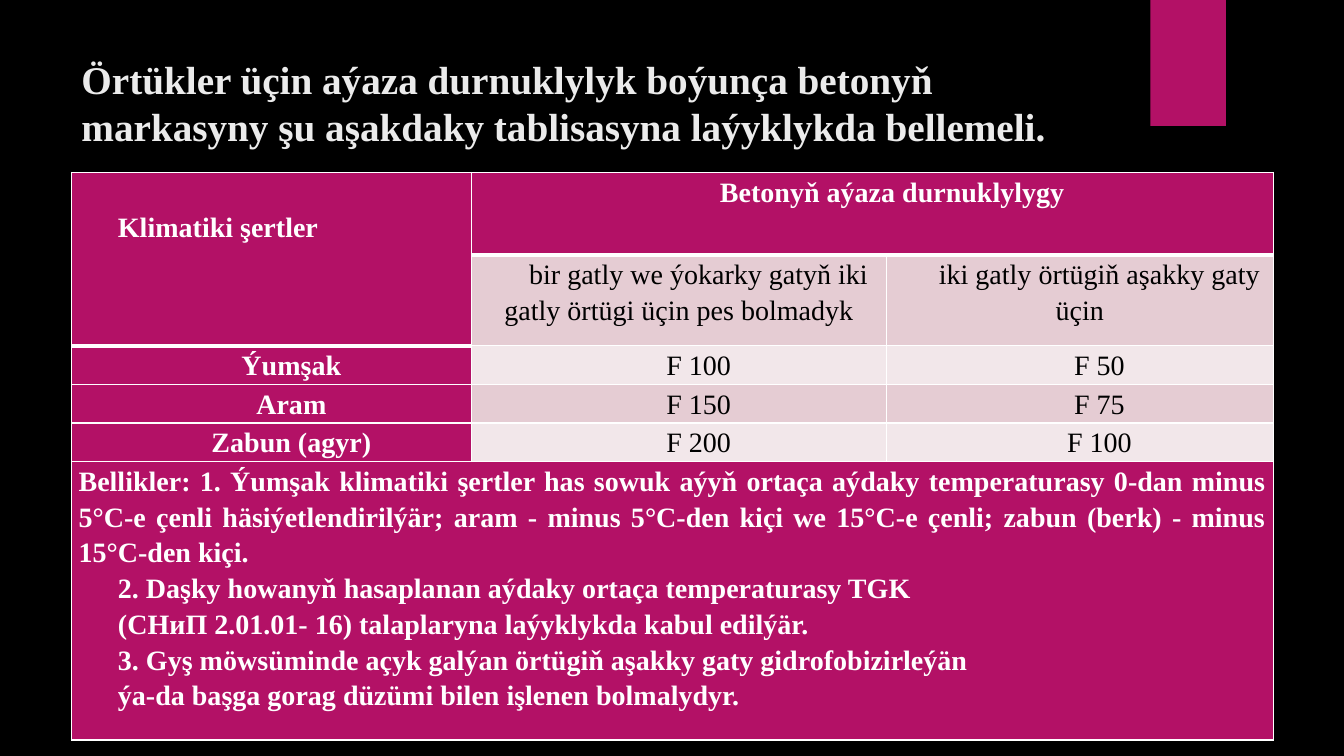
import pptx
import pptx.dml.color
import pptx.enum.shapes
import pptx.enum.text
import pptx.oxml
import pptx.oxml.ns
import pptx.util

Inches = pptx.util.Inches
Pt = pptx.util.Pt
RGBColor = pptx.dml.color.RGBColor
Align = pptx.enum.text.PP_ALIGN

BLACK = RGBColor(0x00, 0x00, 0x00)
WHITE = RGBColor(0xFF, 0xFF, 0xFF)
TITLE_GRAY = RGBColor(0xEB, 0xEB, 0xEB)
MAGENTA = RGBColor(0xB3, 0x11, 0x66)
ROSE = RGBColor(0xE5, 0xCC, 0xD3)
PALE_ROSE = RGBColor(0xF2, 0xE7, 0xEA)

TITLE = ("Örtükler üçin aýaza durnuklylyk boýunça betonyň "
         "markasyny şu aşakdaky tablisasyna laýyklykda bellemeli.")
NOTES = [
    "Bellikler: 1. Ýumşak klimatiki şertler has sowuk aýyň ortaça aýdaky "
    "temperaturasy 0-dan minus 5°С-e çenli häsiýetlendirilýär; aram - minus "
    "5°С-den kiçi we 15°С-e çenli; zabun (berk) - minus 15°С-den kiçi.",
    "2. Daşky howanyň hasaplanan aýdaky ortaça temperaturasy TGK",
    "(СНиП 2.01.01- 16) talaplaryna laýyklykda kabul edilýär.",
    "3. Gyş möwsüminde açyk galýan örtügiň aşakky gaty gidrofobizirleýän",
    "ýa-da başga gorag düzümi bilen işlenen bolmalydyr.",
]
ROWS = [
    ["Klimatiki şertler", "Betonyň aýaza durnuklylygy", ""],
    ["", "bir gatly we ýokarky gatyň iki gatly örtügi üçin pes bolmadyk",
     "iki gatly örtügiň aşakky gaty üçin"],
    ["Ýumşak", "F 100", "F 50"],
    ["Aram", "F 150", "F 75"],
    ["Zabun (agyr)", "F 200", "F 100"],
    ["\n".join(NOTES), "", ""],
]
COLUMN_WIDTHS = [3.97, 4.11, 3.84]
ROW_HEIGHTS = [0.82, 0.9, 0.38, 0.38, 0.38, 2.76]
MERGES = [((0, 0), (1, 0)), ((0, 1), (0, 2)), ((5, 0), (5, 2))]
HEADER_CELLS = {(0, 0), (1, 0), (0, 1), (0, 2)}
LAST_ROW = len(ROWS) - 1


class SlideBuilder:
    font_name = "Times New Roman"

    def __init__(self, presentation, background):
        self.slide = presentation.slides.add_slide(presentation.slide_layouts[6])
        self.slide.background.fill.solid()
        self.slide.background.fill.fore_color.rgb = background

    def style_font(self, paragraph, size, color, bold):
        font = paragraph.font
        font.name = self.font_name
        font.size = Pt(size)
        font.bold = bold
        font.color.rgb = color

    def rectangle(self, left, top, width, height, color):
        shape = self.slide.shapes.add_shape(
            pptx.enum.shapes.MSO_SHAPE.RECTANGLE,
            Inches(left), Inches(top), Inches(width), Inches(height))
        shape.shadow.inherit = False
        shape.fill.solid()
        shape.fill.fore_color.rgb = color
        shape.line.fill.background()

    def title(self, left, top, width, height, text):
        box = self.slide.shapes.add_textbox(
            Inches(left), Inches(top), Inches(width), Inches(height))
        box.text_frame.word_wrap = True
        paragraph = box.text_frame.paragraphs[0]
        paragraph.text = text
        self.style_font(paragraph, 28, TITLE_GRAY, True)

    def table(self, left, top):
        table = self.slide.shapes.add_table(
            len(ROWS), len(COLUMN_WIDTHS), Inches(left), Inches(top),
            Inches(sum(COLUMN_WIDTHS)), Inches(sum(ROW_HEIGHTS))).table
        table.first_row = table.horz_banding = False
        for column, width in zip(table.columns, COLUMN_WIDTHS):
            column.width = Inches(width)
        for row, height in zip(table.rows, ROW_HEIGHTS):
            row.height = Inches(height)
        for first, last in MERGES:
            table.cell(*first).merge(table.cell(*last))
        for row, texts in enumerate(ROWS):
            for column, text in enumerate(texts):
                cell = table.cell(row, column)
                if not cell.is_spanned:
                    self.cell(cell, row, column, text)

    def cell(self, cell, row, column, text):
        strong = (row, column) in HEADER_CELLS or column == 0
        self.borders(cell, row, column)
        cell.fill.solid()
        cell.fill.fore_color.rgb = (
            MAGENTA if strong else ROSE if row % 2 else PALE_ROSE)
        cell.margin_left = cell.margin_right = Inches(0.07)
        cell.margin_top = Inches(0.35 if (row, column) == (0, 0) else 0)
        cell.margin_bottom = 0
        cell.text = text
        justified = column == 0 and row in (0, LAST_ROW)
        for index, paragraph in enumerate(cell.text_frame.paragraphs):
            paragraph.alignment = Align.JUSTIFY if justified else Align.CENTER
            paragraph.line_spacing = 1.15
            if row != LAST_ROW or index > 0:
                paragraph._p.get_or_add_pPr().set("indent", str(Inches(0.39)))
            self.style_font(paragraph, 20, WHITE if strong else BLACK, strong)

    def borders(self, cell, row, column):
        """Thin white lines, with a thick one under the header cells."""
        weights = {
            "L": 1, "R": 1,
            "T": 3 if (row - 1, column) in HEADER_CELLS else 1,
            "B": 3 if (row, column) in HEADER_CELLS else 1,
        }
        properties = cell._tc.get_or_add_tcPr()
        for side, weight in weights.items():
            properties.append(pptx.oxml.parse_xml(
                f'<a:ln{side} {pptx.oxml.ns.nsdecls("a")} w="{Pt(weight)}">'
                f'<a:solidFill><a:srgbClr val="{WHITE}"/></a:solidFill>'
                f'</a:ln{side}>'))


def main():
    presentation = pptx.Presentation()
    presentation.slide_width = Inches(13.33)
    presentation.slide_height = Inches(7.5)
    builder = SlideBuilder(presentation, BLACK)
    builder.rectangle(11.41, 0, 0.75, 1.25, MAGENTA)
    builder.title(0.71, 0.5, 10.29, 1.53, TITLE)
    builder.table(0.71, 1.71)
    presentation.save("out.pptx")


if __name__ == "__main__":
    main()
